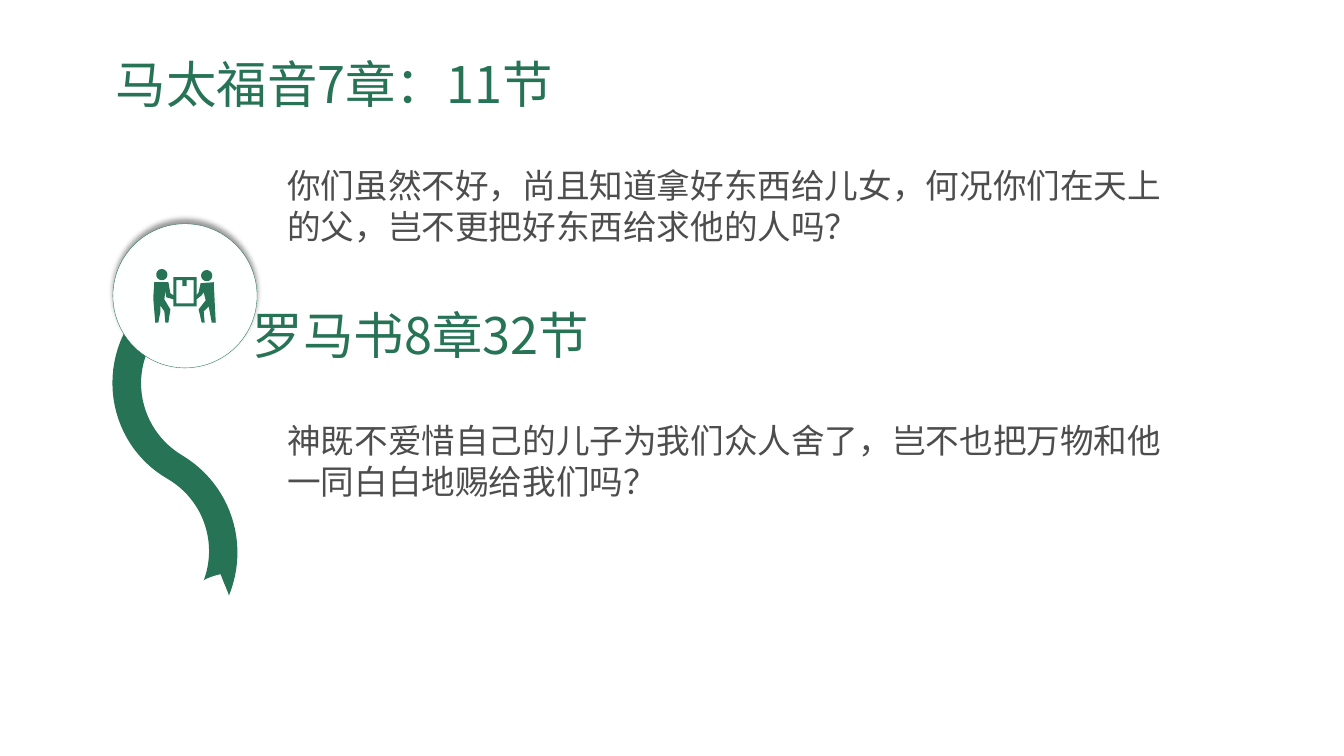
from dataclasses import dataclass
from math import cos, pi, sin

from lxml import etree
from pptx import Presentation
from pptx.dml.color import RGBColor as RGB
from pptx.enum.shapes import MSO_SHAPE as SHAPE
from pptx.enum.text import MSO_ANCHOR as ANCHOR, MSO_AUTO_SIZE as FIT, PP_ALIGN as ALIGN
from pptx.oxml import parse_xml
from pptx.oxml.ns import nsdecls, qn
from pptx.util import Inches, Pt


@dataclass(frozen=True)
class Theme:
    green: RGB = RGB(0x27, 0x73, 0x56)
    grey: RGB = RGB(0x4D, 0x4D, 0x4D)
    disc: RGB = RGB(0xFE, 0xFF, 0xFF)
    heading_font: str = "Noto Sans CJK SC"
    body_font: str = "Calibri"
    heading_size: int = 36
    body_size: int = 24


THEME = Theme()

# Content: heading, heading left and top, verse, verse top
PASSAGES = [
    ("马太福音7章：11节", 1.05, 0.4,
     "你们虽然不好，尚且知道拿好东西给儿女，何况你们在天上的父，岂不更把好东西给求他的人吗？", 1.59),
    ("罗马书8章32节", 2.41, 2.89,
     "神既不爱惜自己的儿子为我们众人舍了，岂不也把万物和他一同白白地赐给我们吗？", 4.12),
]
HEADING_SIZE = (10.76, 0.93)
VERSE_LEFT, VERSE_SIZE = 2.75, (8.92, 0.91)
DISC = (1.12, 2.22, 1.43, 1.43)

# Ribbon outline: a point is a straight step, three points are a Bézier curve
RIBBON_START = (1.36, 3.11)
RIBBON_STEPS = [
    [(1.26, 3.25)],
    [(0.96, 3.78), (1.14, 4.45), (1.66, 4.75)],
    [(2.02, 4.96), (2.16, 5.39), (2.02, 5.76)],
    [(2.01, 5.75), (2.18, 5.69), (2.19, 5.7)],
    [(2.2, 5.74), (2.27, 5.89), (2.27, 5.91)],
    [(2.48, 5.4), (2.29, 4.81), (1.81, 4.52)],
    [(1.42, 4.29), (1.28, 3.79), (1.51, 3.39)],
    [(1.55, 3.33)],
]

# Icon: two people carrying a box
HEAD_CENTRES, HEAD_RADIUS = [(1.605, 2.725), (2.05, 2.735)], 0.055
BOX_OPENING = [(1.85, 2.78), (1.85, 2.84), (1.81, 2.84), (1.81, 2.78),
               (1.75, 2.78), (1.75, 3.01), (1.92, 3.01), (1.92, 2.78)]
CARRIERS = [
    (1.73, 2.75), (1.72, 2.75), (1.72, 2.93), (1.69, 2.91), (1.67, 2.8),
    (1.53, 2.8), (1.52, 2.96), (1.53, 3.08), (1.54, 3.2), (1.57, 3.2),
    (1.59, 3.1), (1.59, 3.03), (1.63, 3.09), (1.64, 3.2), (1.67, 3.2),
    (1.69, 3.07), (1.63, 2.97), (1.64, 2.89), (1.65, 2.95), (1.72, 2.97),
    (1.72, 3.04), (1.95, 3.04), (1.95, 2.97), (2, 2.93), (2.02, 2.9),
    (2.04, 2.98), (1.97, 3.07), (2, 3.2), (2.03, 3.2), (2.02, 3.09),
    (2.07, 3.04), (2.1, 3.2), (2.14, 3.2), (2.13, 3.01), (2.12, 2.8),
    (1.99, 2.81), (1.97, 2.9), (1.95, 2.93), (1.95, 2.75),
]


def trace(start, steps, parts=24):
    """Turn straight steps and Bézier curves into points."""
    points = [start]
    for step in steps:
        if len(step) == 1:
            points += step
            continue
        curve = [points[-1], *step]
        for i in range(1, parts + 1):
            t = i / parts
            weights = ((1 - t) ** 3, 3 * t * (1 - t) ** 2, 3 * t * t * (1 - t), t ** 3)
            points.append(tuple(sum(w * pt[axis] for w, pt in zip(weights, curve))
                                for axis in (0, 1)))
    return points


def circle(centre, radius, parts=32):
    x, y = centre
    angles = [2 * pi * i / parts for i in range(parts)]
    return [(x + radius * cos(a), y + radius * sin(a)) for a in angles]


def add_outline(slide, contours):
    """Draw closed contours as one green shape."""
    contours = [[(Inches(x), Inches(y)) for x, y in c] for c in contours]
    builder = slide.shapes.build_freeform(*contours[0][0], scale=1.0)
    for i, contour in enumerate(contours):
        if i:
            builder.move_to(*contour[0])
        builder.add_line_segments(contour[1:], close=True)
    sp = builder.convert_to_shape()
    sp.shadow.inherit = False
    sp.fill.solid()
    sp.fill.fore_color.rgb = THEME.green
    sp.line.fill.background()


def add_disc(slide):
    sp = slide.shapes.add_shape(SHAPE.OVAL, *map(Inches, DISC))
    sp.fill.solid()
    sp.fill.fore_color.rgb = THEME.disc
    sp.line.color.rgb = THEME.green
    sp.line.width = Pt(0.25)
    sp.shadow.inherit = False
    effects = sp.element.spPr.find(qn("a:effectLst"))
    effects.append(parse_xml(
        f'<a:outerShdw {nsdecls("a")} blurRad="{Pt(4)}" dist="{Pt(3)}" dir="{270 * 60000}" '
        'rotWithShape="0"><a:srgbClr val="000000"><a:alpha val="40000"/></a:srgbClr></a:outerShdw>'))


def place(sp, left, top, size):
    sp.left, sp.top = Inches(left), Inches(top)
    sp.width, sp.height = map(Inches, size)


def write(sp, text, font, size, color):
    tf = sp.text_frame
    tf.text = text
    tf.word_wrap = True
    p = tf.paragraphs[0]
    p.alignment = ALIGN.LEFT
    r = p.runs[0]
    r.font.name, r.font.size = font, Pt(size)
    r.font.color.rgb = color
    return tf, p, r


def write_heading(sp, text):
    tf, p, r = write(sp, text, THEME.heading_font, THEME.heading_size, THEME.green)
    tf.auto_size = FIT.NONE
    tf.vertical_anchor = ANCHOR.MIDDLE
    p.line_spacing = 0.9
    etree.SubElement(r.font._element, qn("a:ea"), typeface=THEME.heading_font)


def main():
    prs = Presentation()
    prs.slide_width, prs.slide_height = Inches(13.33), Inches(7.5)
    slide = prs.slides.add_slide(prs.slide_layouts[5])

    # Ribbon, disc and icon
    add_outline(slide, [trace(RIBBON_START, RIBBON_STEPS)])
    add_disc(slide)
    heads = [circle(c, HEAD_RADIUS) for c in HEAD_CENTRES]
    add_outline(slide, [CARRIERS, BOX_OPENING, *heads])

    # Headings and verses
    for i, (heading, left, top, verse, verse_top) in enumerate(PASSAGES):
        sp = slide.shapes.add_textbox(0, 0, 0, 0) if i else slide.shapes.title
        place(sp, left, top, HEADING_SIZE)
        write_heading(sp, heading)

        sp = slide.shapes.add_textbox(0, 0, 0, 0)
        place(sp, VERSE_LEFT, verse_top, VERSE_SIZE)
        tf, _, _ = write(sp, verse, THEME.body_font, THEME.body_size, THEME.grey)
        tf.auto_size = FIT.SHAPE_TO_FIT_TEXT

    prs.save("out.pptx")


if __name__ == "__main__":
    main()
